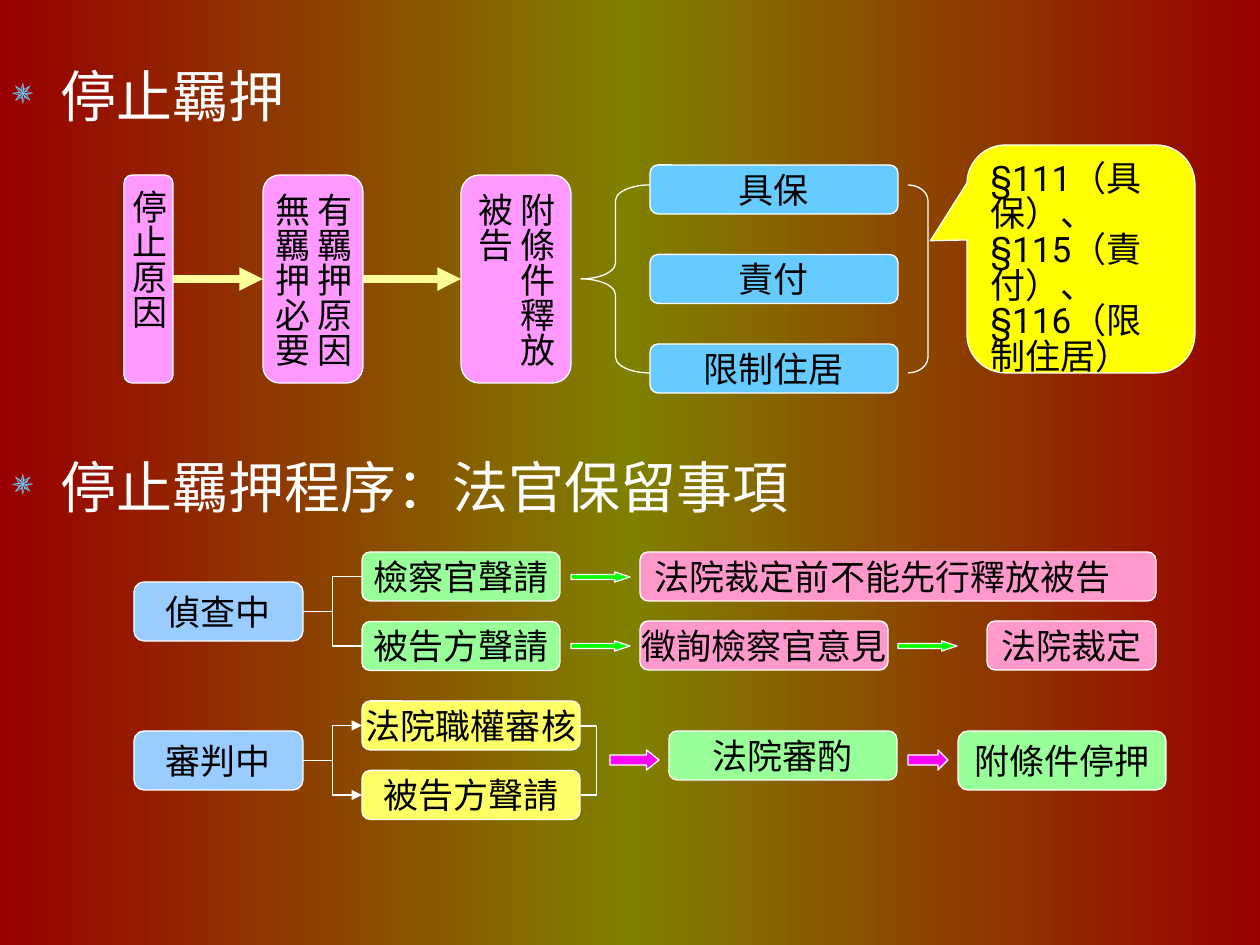
import copy

import lxml.etree
import pptx
import pptx.dml.color
import pptx.enum.shapes
import pptx.enum.text
import pptx.oxml.ns
import pptx.util

RGB = pptx.dml.color.RGBColor
SHAPE = pptx.enum.shapes.MSO_SHAPE
CONNECTOR = pptx.enum.shapes.MSO_CONNECTOR
ALIGN = pptx.enum.text.PP_ALIGN
ANCHOR = pptx.enum.text.MSO_ANCHOR
qn = pptx.oxml.ns.qn

EMU_PER_PX = 914400 / 126
FONT = "Roboto"
LEFT, RIGHT = 1, 3  # connection sites

WHITE = RGB(0xFF, 0xFF, 0xFF)
BLACK = RGB(0x00, 0x00, 0x00)
DARK_RED = RGB(0x99, 0x00, 0x00)
OLIVE = RGB(0x80, 0x80, 0x00)
ORCHID = RGB(0xFF, 0x99, 0xFF)
CREAM = RGB(0xFF, 0xFF, 0x99)
SKY = RGB(0x66, 0xCC, 0xFF)
YELLOW = RGB(0xFF, 0xFF, 0x00)
PALE_BLUE = RGB(0x99, 0xCC, 0xFF)
PALE_GREEN = RGB(0x99, 0xFF, 0x99)
PINK = RGB(0xFF, 0x99, 0xCC)
LEMON = RGB(0xFF, 0xFF, 0x66)
GREEN = RGB(0x00, 0xFF, 0x00)
MAGENTA = RGB(0xFF, 0x00, 0xFF)


def px(length):
    return pptx.util.Emu(round(length * EMU_PER_PX))


def add_xml(parent, tag, **attributes):
    child = lxml.etree.SubElement(parent, qn(tag))
    for name, value in attributes.items():
        child.set(name, str(value))
    return child


def write_text(shape, text, size=20, color=BLACK, align=ALIGN.CENTER,
               anchor=ANCHOR.MIDDLE, wrap=False, spacing=None, vertical=False):
    frame = shape.text_frame
    frame.text = text
    frame.word_wrap = wrap
    frame.vertical_anchor = anchor
    if vertical:
        frame._txBody.bodyPr.set("vert", "eaVert")
    for paragraph in frame.paragraphs:
        paragraph.alignment = align
        paragraph.line_spacing = spacing
        font = paragraph.runs[0].font
        font.name, font.size = FONT, pptx.util.Pt(size)
        font.color.rgb = color
    return frame


def add_outline(slide, preset, box, fill=None, adjustments=()):
    shape = slide.shapes.add_shape(preset, *map(px, box))
    shape.shadow.inherit = False
    if fill is None:
        shape.fill.background()
    else:
        shape.fill.solid()
        shape.fill.fore_color.rgb = fill
    shape.line.color.rgb = WHITE
    shape.line.width = pptx.util.Pt(0.75)
    for index, value in enumerate(adjustments):
        shape.adjustments[index] = value
    return shape


def add_node(slide, text, box, fill, **text_format):
    node = add_outline(slide, SHAPE.FLOWCHART_ALTERNATE_PROCESS, box, fill)
    write_text(node, text, **text_format)
    return node


def add_line(slide, kind, ends=(0, 0, 0, 0), color=WHITE, width=0.75, arrow=False):
    line = slide.shapes.add_connector(kind, *map(px, ends))
    line.line.color.rgb = color
    line.line.width = pptx.util.Pt(width)
    if arrow:
        add_xml(line.line._get_or_add_ln(), "a:tailEnd", type="triangle")
    add_xml(line._element.spPr, "a:effectLst")
    return line


def join(slide, source, target, kind=CONNECTOR.ELBOW, **line_format):
    line = add_line(slide, kind, **line_format)
    line.begin_connect(source, RIGHT)
    line.end_connect(target, LEFT)


def paint_background(slide):
    fill = slide.background.fill
    fill.gradient()
    fill.gradient_angle = 0
    stop_list = next(slide.element.iter(qn("a:gsLst")))
    stop_list.append(copy.deepcopy(stop_list[0]))
    for index, color in enumerate((DARK_RED, OLIVE, DARK_RED)):
        stop = fill.gradient_stops[index]
        stop.position = index / 2
        stop.color.rgb = color


def add_headings(slide):
    body = slide.shapes.add_textbox(*map(px, (0, 55, 1134, 789)))
    frame = write_text(body, "停止羈押\n停止羈押程序：法官保留事項", size=32,
                       color=WHITE, align=ALIGN.LEFT, anchor=ANCHOR.TOP, wrap=True)
    for paragraph, gap in zip(frame.paragraphs, (6, 185)):
        paragraph.space_before = pptx.util.Pt(gap)
        properties = paragraph._p.get_or_add_pPr()
        properties.set("marL", str(px(48)))
        properties.set("indent", str(-px(48)))
        bullet_color = add_xml(properties, "a:buClr")
        add_xml(bullet_color, "a:srgbClr", val=SKY)
        add_xml(properties, "a:buSzPct", val=65000)
        add_xml(properties, "a:buChar", char="✵")


def add_release_flow(slide):
    # Grounds leading to conditional release
    steps = [
        ("停止原因", 124, 49, ALIGN.CENTER),
        ("有羈押原因\n無羈押必要", 263, 100, ALIGN.CENTER),
        ("附條件釋放\n被告", 461, 110, ALIGN.LEFT),
    ]
    nodes = [add_node(slide, text, (left, 175, width, 208), ORCHID,
                      align=align, vertical=True)
             for text, left, width, align in steps]
    for source, target in zip(nodes, nodes[1:]):
        join(slide, source, target, CONNECTOR.STRAIGHT,
             color=CREAM, width=4.5, arrow=True)

    # Conditions, grouped by a brace and a bracket
    for row, condition in enumerate(("具保", "責付", "限制住居")):
        add_node(slide, condition, (650, 165 + 89.5 * row, 248, 49), SKY)
    add_outline(slide, SHAPE.LEFT_BRACE, (581, 185, 69, 188), adjustments=(0.23, 0.5))
    add_outline(slide, SHAPE.RIGHT_BRACKET, (908, 185, 20, 188), adjustments=(0.79,))

    # Articles of law
    articles = add_outline(slide, SHAPE.ROUNDED_RECTANGULAR_CALLOUT,
                           (967, 145, 228, 228), YELLOW, (-0.66, -0.08, 0.17))
    write_text(articles, "§111（具保）、§115（責付）、§116（限制住居）",
               align=ALIGN.LEFT, anchor=ANCHOR.TOP, wrap=True, spacing=0.85)


def add_branches(slide, stage, top, choices, width, fill, arrow=False):
    stage_node = add_node(slide, stage, (134, top, 169, 59), PALE_BLUE)
    for row, choice in enumerate(choices):
        node = add_node(slide, choice, (362, top - 30 + 69.5 * row, width, 49), fill)
        join(slide, stage_node, node, arrow=arrow)


def add_procedure(slide):
    # During investigation
    add_branches(slide, "偵查中", 582, ("檢察官聲請", "被告方聲請"), 198, PALE_GREEN)
    add_node(slide, "法院裁定前不能先行釋放被告", (640, 552, 516, 49), PINK,
             align=ALIGN.LEFT)
    add_node(slide, "徵詢檢察官意見", (640, 621, 248, 49), PINK)
    add_node(slide, "法院裁定", (987, 621, 169, 49), PINK)
    for left, top in ((571, 572), (571, 641), (898, 641)):
        add_outline(slide, SHAPE.RIGHT_ARROW, (left, top, 59, 10), GREEN, (0.5, 1.51))

    # During trial
    add_branches(slide, "審判中", 731, ("法院職權審核", "被告方聲請"), 218, LEMON,
                 arrow=True)
    merge = add_line(slide, CONNECTOR.ELBOW, (580, 726, 581, 795))
    guides = merge._element.spPr.prstGeom.get_or_add_avLst()
    add_xml(guides, "a:gd", name="adj1", fmla="val 1700000")
    add_node(slide, "法院審酌", (669, 731, 228, 49), PALE_GREEN)
    add_node(slide, "附條件停押", (958, 731, 208, 59), PALE_GREEN)
    for left, width, head in ((610, 49, 0.62), (908, 40, 0.5)):
        add_outline(slide, SHAPE.RIGHT_ARROW, (left, 750, width, 20), MAGENTA,
                    (0.5, head))


def main():
    deck = pptx.Presentation()
    deck.slide_width, deck.slide_height = px(1260), px(945)
    slide = deck.slides.add_slide(deck.slide_layouts[6])
    paint_background(slide)
    add_headings(slide)
    add_release_flow(slide)
    add_procedure(slide)
    deck.save("out.pptx")


if __name__ == "__main__":
    main()
